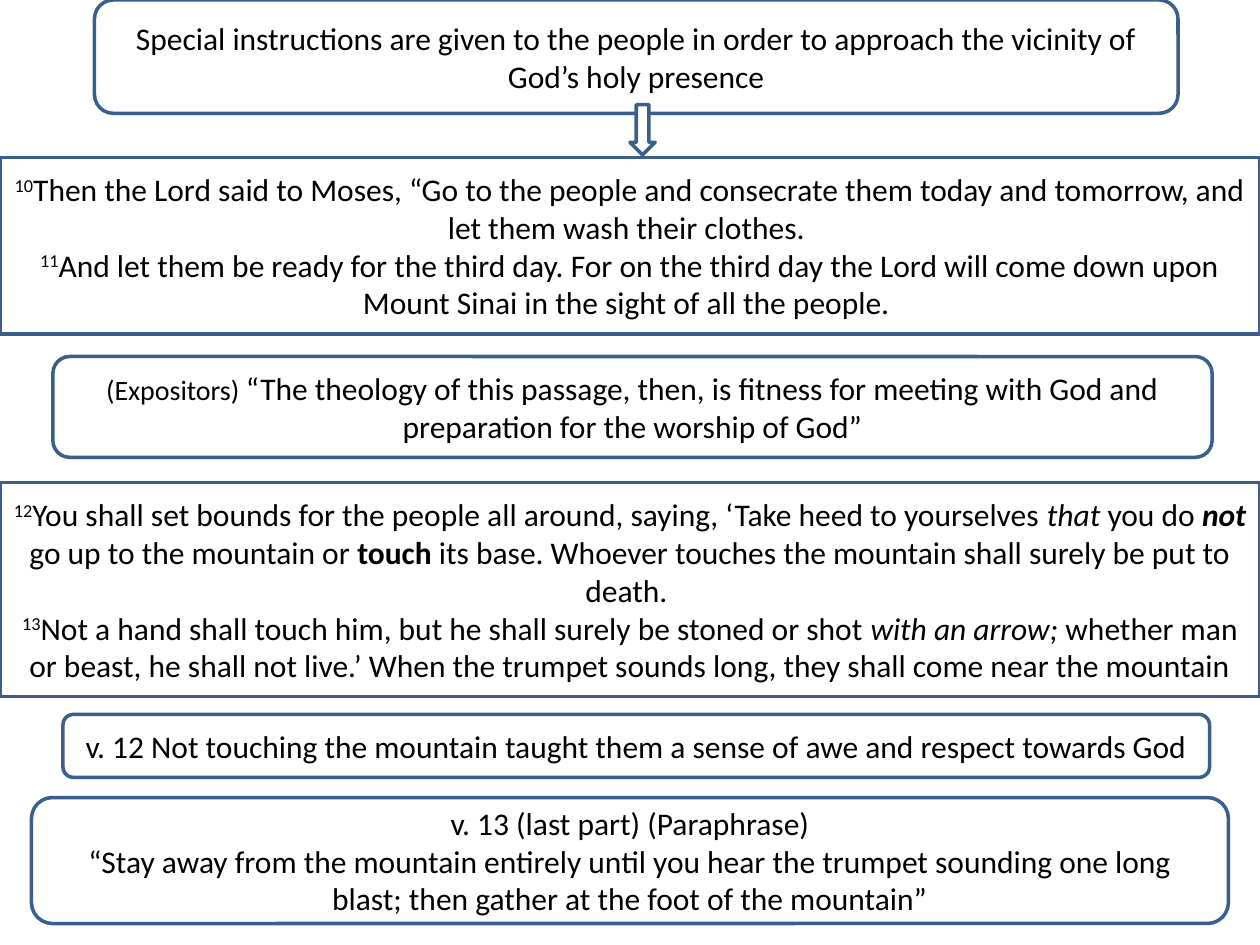
"""Build a slide of scripture passages with commentary boxes."""
from pptx import Presentation
from pptx.dml.color import RGBColor
from pptx.enum.shapes import MSO_SHAPE
from pptx.enum.text import MSO_ANCHOR, PP_ALIGN
from pptx.util import Inches, Pt

COLOURS = {"fill": "FFFFFF", "line": "3A5F8C", "text": "000000"}
FONT = "Calibri"


def add_outlined_shape(page, kind, left, top, width, height):
    shape = page.shapes.add_shape(
        kind, Inches(left), Inches(top), Inches(width), Inches(height))
    shape.shadow.inherit = False
    shape.fill.solid()
    shape.fill.fore_color.rgb = RGBColor.from_string(COLOURS["fill"])
    shape.line.color.rgb = RGBColor.from_string(COLOURS["line"])
    shape.line.width = Pt(2)
    return shape


def add_span(para, text, size=18, bold=False, italic=False, raised=False):
    span = para.add_run()
    span.text = text
    span.font.name = FONT
    span.font.size = Pt(size)
    span.font.bold = bold
    span.font.italic = italic
    span.font.color.rgb = RGBColor.from_string(COLOURS["text"])
    if raised:
        span._r.get_or_add_rPr().set("baseline", "30000")


def add_para(box, spans, first=False):
    frame = box.text_frame
    para = frame.paragraphs[0] if first else frame.add_paragraph()
    para.alignment = PP_ALIGN.CENTER
    for text, styles in spans:
        if text == "\n":
            para.add_line_break()
        else:
            add_span(para, text, **styles)


def add_box(page, kind, place, paras):
    box = add_outlined_shape(page, kind, *place)
    box.text_frame.word_wrap = True
    box.text_frame.vertical_anchor = MSO_ANCHOR.MIDDLE
    for index, spans in enumerate(paras):
        add_para(box, spans, first=index == 0)


def add_passage(page, top, height, verses):
    """Stack numbered verses in a full-width box, separated by line breaks."""
    spans = []
    for number, words in verses:
        if spans:
            spans.append(("\n", {}))
        spans += [(number, {"raised": True}), *words]
    add_box(page, MSO_SHAPE.RECTANGLE, (0, top, 10, height), [spans])


def add_comment(page, place, *paras):
    add_box(page, MSO_SHAPE.ROUNDED_RECTANGLE, place, paras)


def main():
    deck = Presentation()
    deck.slide_width, deck.slide_height = Inches(10), Inches(7.5)
    page = deck.slides.add_slide(deck.slide_layouts[6])
    plain, italic, bold = {}, {"italic": True}, {"bold": True}

    add_passage(page, 1.25, 1.4, [
        ("10", [("Then the Lord said to Moses, “Go to the people and consecrate "
                 "them today and tomorrow, and let them wash their clothes. ", plain)]),
        ("11", [("And let them be ready for the third day. For on the third day "
                 "the Lord will come down upon Mount Sinai in the sight of all "
                 "the people. ", plain)]),
    ])
    add_comment(page, (0.75, 0, 8.6, 0.9), [
        ("Special instructions are given to the people in order to approach "
         "the vicinity of God’s holy presence", plain)])
    add_outlined_shape(page, MSO_SHAPE.DOWN_ARROW, 5, 0.83, 0.2, 0.4)
    add_passage(page, 3.83, 1.7, [
        ("12", [("You shall set bounds for the people all around, saying, "
                 "‘Take heed to yourselves ", plain),
                ("that", italic),
                (" you do ", plain),
                ("not", {**bold, **italic}),
                (" go up to the mountain or ", plain),
                ("touch", bold),
                (" its base. Whoever touches the mountain shall surely be put "
                 "to death. ", plain)]),
        ("13", [("Not a hand shall touch him, but he shall surely be stoned "
                 "or shot ", plain),
                ("with an arrow;", italic),
                (" whether man or beast, he shall not live.’ When the trumpet "
                 "sounds long, they shall come near the mountain", plain)]),
    ])
    add_comment(page, (0.42, 2.83, 9.2, 0.8), [
        ("(Expositors) ", {"size": 16}),
        ("“The theology of this passage, then, is fitness for meeting with God "
         "and preparation for the worship of God”", plain)])
    add_comment(page, (0.5, 5.67, 9.1, 0.5), [
        ("v. 12 Not touching the mountain taught them a sense of awe and "
         "respect towards God", plain)])
    add_comment(
        page, (0.25, 6.33, 9.5, 1),
        [("v. 13 (last part) (Paraphrase)", plain)],
        [("“Stay away from the mountain entirely until you hear the trumpet "
          "sounding one long blast; then gather at the foot of the mountain”", plain)])

    deck.save("out.pptx")


if __name__ == "__main__":
    main()
